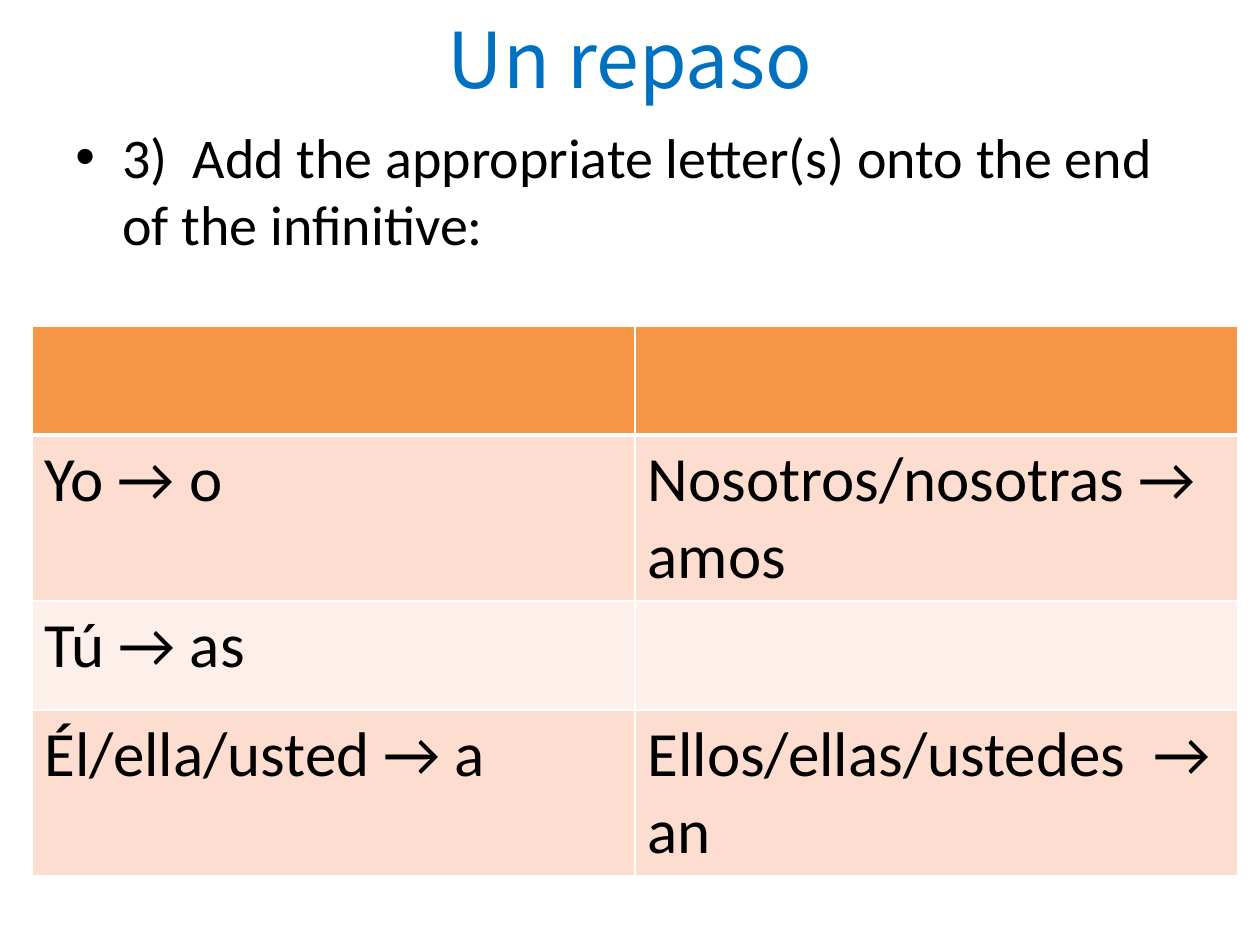
from collections import namedtuple
from dataclasses import dataclass

from lxml.etree import SubElement
from pptx import Presentation
from pptx.dml.color import RGBColor as Color
from pptx.enum.text import MSO_ANCHOR as Anchor, PP_ALIGN as Align
from pptx.oxml.ns import qn
from pptx.util import Emu, Pt

EMU_PER_PX = 914400 / 126
Box = namedtuple("Box", "left top width height")


@dataclass(frozen=True)
class Theme:
    title_font: str = "Noto Sans CJK KR"
    body_font: str = "Calibri"
    title_size: int = 44
    body_size: int = 32
    cell_size: int = 36
    title: str = "0070C0"
    text: str = "000000"
    header: str = "F79646"
    bands: tuple = ("FCDDCF", "FDEFE9")
    rule: str = "FFFFFF"
    thin: int = 1
    thick: int = 3


THEME = Theme()
TITLE_FORMAT = {"name": THEME.title_font, "size": THEME.title_size, "color": THEME.title}
BODY_FORMAT = {"name": THEME.body_font, "size": THEME.body_size, "color": THEME.text}
CELL_FORMAT = {**BODY_FORMAT, "size": THEME.cell_size}

ROW_HEIGHTS = (109, 166, 109, 166)
ENDINGS = (
    ("", ""),
    ("Yo → o", "Nosotros/nosotras → amos"),
    ("Tú → as", ""),
    ("Él/ella/usted → a", "Ellos/ellas/ustedes  → an"),
)


def px(length):
    return Emu(round(length * EMU_PER_PX))


def write(para, text, text_format):
    span = para.add_run()
    span.text = text
    values = {**text_format, "size": Pt(text_format["size"])}
    span.font.color.rgb = Color.from_string(values.pop("color"))
    for name, value in values.items():
        setattr(span.font, name, value)


def add_text(page, box, text, text_format, anchor):
    frame = page.shapes.add_textbox(*map(px, box)).text_frame
    for name, value in {"word_wrap": True, "vertical_anchor": anchor}.items():
        setattr(frame, name, value)
    para = frame.paragraphs[0]
    write(para, text, text_format)
    return para


def add_title(page, box, text):
    para = add_text(page, box, text, TITLE_FORMAT, Anchor.MIDDLE)
    para.alignment = Align.CENTER


def add_bullet(page, box, text):
    para = add_text(page, box, text, BODY_FORMAT, Anchor.TOP)
    para.space_before = Pt(THEME.body_size * 0.2)
    properties = para._p.get_or_add_pPr()
    indent = px(47)
    for name, value in {"marL": indent, "indent": -indent}.items():
        properties.set(name, str(value))
    SubElement(properties, qn("a:buFont"), typeface="Arial")
    SubElement(properties, qn("a:buChar"), char="•")


def add_borders(cell, widths):
    properties = cell._tc.get_or_add_tcPr()
    for side, width in widths.items():
        line = SubElement(properties, qn(f"a:ln{side}"), w=str(Pt(width)))
        fill = SubElement(line, qn("a:solidFill"))
        SubElement(fill, qn("a:srgbClr"), val=THEME.rule)


def add_endings_table(page, box, rows):
    column_count = len(rows[0])
    table = page.shapes.add_table(len(rows), column_count, *map(px, box)).table
    for column in table.columns:
        column.width = px(box.width // column_count)
    for index, (texts, height) in enumerate(zip(rows, ROW_HEIGHTS)):
        table.rows[index].height = px(height)
        color = THEME.bands[(index - 1) % 2] if index else THEME.header
        widths = {
            "L": THEME.thin,
            "R": THEME.thin,
            "T": THEME.thick if index == 1 else THEME.thin,
            "B": THEME.thick if index == 0 else THEME.thin,
        }
        for cell, text in zip(table.rows[index].cells, texts):
            add_borders(cell, widths)
            cell.fill.solid()
            cell.fill.fore_color.rgb = Color.from_string(color)
            if text:
                write(cell.text_frame.paragraphs[0], text, CELL_FORMAT)


def main():
    deck = Presentation()
    deck.slide_width, deck.slide_height = px(1260), px(945)
    page = deck.slides.add_slide(deck.slide_layouts[6])
    add_title(page, Box(63, -21, 1134, 158), "Un repaso")
    add_bullet(
        page,
        Box(63, 116, 1134, 819),
        "3)  Add the appropriate letter(s) onto the end of the infinitive:",
    )
    add_endings_table(page, Box(32, 326, 1206, sum(ROW_HEIGHTS)), ENDINGS)
    deck.save("out.pptx")


if __name__ == "__main__":
    main()
